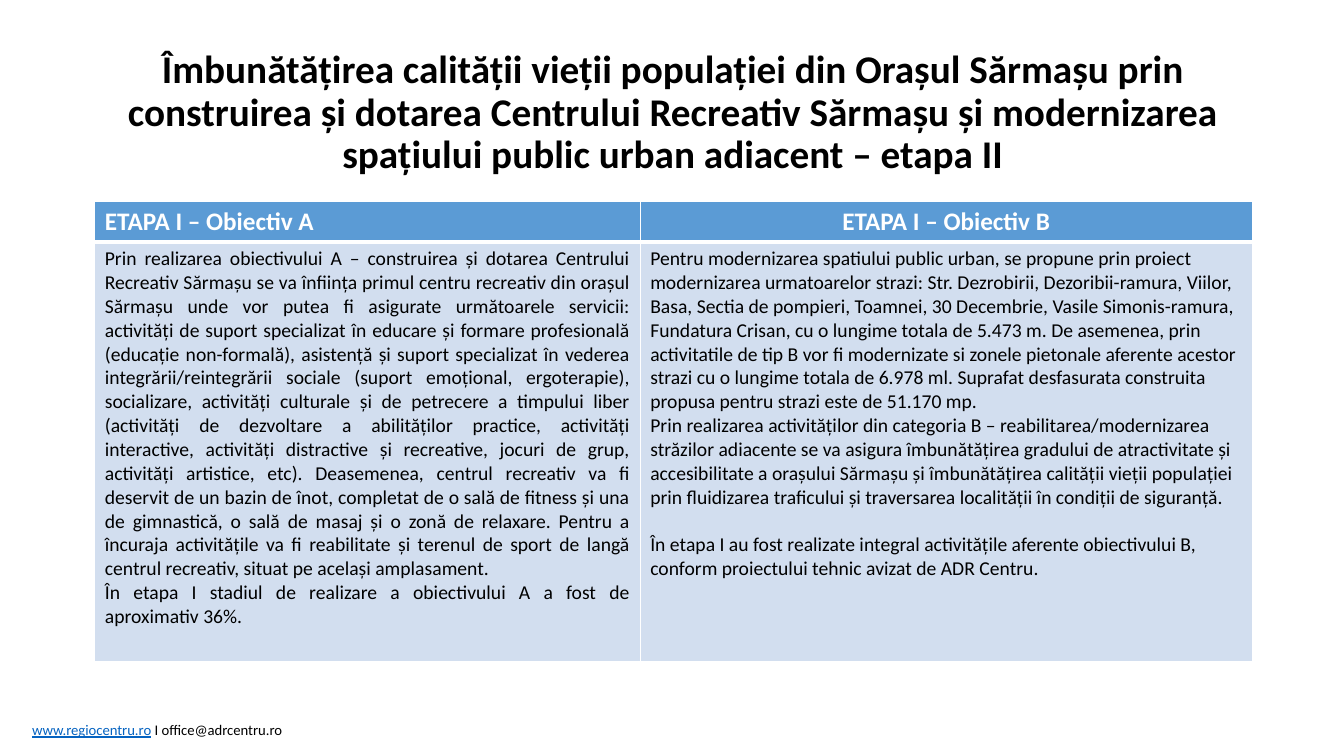
from lxml import etree
from pptx import Presentation
from pptx import util as u
from pptx.dml.color import RGBColor
from pptx.enum import text
from pptx.oxml.ns import qn

COLORS = {"black": "000000", "white": "FFFFFF", "link": "0563C1",
          "header": "5B9BD5", "body": "D2DEEF"}
ALIGN = text.PP_ALIGN

TITLE = ("Îmbunătățirea calității vieții populației din Orașul Sărmașu prin construirea și dotarea "
         "Centrului Recreativ Sărmașu și modernizarea spațiului public urban adiacent – etapa II")
HEADERS = [("ETAPA I – Obiectiv A", ALIGN.LEFT), ("ETAPA I – Obiectiv B", ALIGN.CENTER)]

# Each paragraph is a list of runs
OBJECTIVE_A = [
    ["Prin realizarea obiectivului A – construirea și dotarea Centrului Recreativ Sărmașu se va "
     "înființa primul centru recreativ din orașul Sărmașu unde vor putea fi asigurate următoarele "
     "servicii: activități de suport specializat în educare și formare profesională (educație "
     "non-formală), asistență și suport specializat în vederea integrării/reintegrării sociale "
     "(suport emoțional, ergoterapie), socializare, activități culturale și de petrecere a timpului "
     "liber (activități de dezvoltare a abilităților practice, activități interactive, activități "
     "distractive și recreative, jocuri de grup, activități artistice, etc). ",
     "Deasemenea, centrul recreativ va fi deservit de un bazin de înot, completat de o sală de "
     "fitness și una de gimnastică, o sală de masaj și o zonă de relaxare. Pentru a încuraja "
     "activitățile va fi reabilitate și terenul de sport de langă centrul recreativ, situat pe "
     "același amplasament."],
    ["În etapa I stadiul de realizare a obiectivului A a fost de aproximativ 36%."],
]
OBJECTIVE_B = [
    ["Pentru modernizarea spatiului public urban, se propune prin proiect modernizarea urmatoarelor "
     "strazi: Str. Dezrobirii, Dezoribii-ramura, Viilor, Basa, Sectia de pompieri, Toamnei, 30 "
     "Decembrie, Vasile Simonis-ramura, Fundatura Crisan, cu o lungime totala de 5.473 m. De "
     "asemenea, prin activitatile de tip B vor fi modernizate si zonele pietonale aferente acestor "
     "strazi cu o lungime totala de 6.978 ml. Suprafat desfasurata construita propusa pentru strazi "
     "este de 51.170 mp."],
    ["Prin realizarea activităților din categoria B – reabilitarea/modernizarea străzilor adiacente "
     "se va asigura îmbunătățirea gradului de atractivitate și accesibilitate a orașului Sărmașu și "
     "îmbunătățirea calității vieții populației prin fluidizarea traficului și traversarea "
     "localității în condiții de siguranță."],
    ["În etapa I au fost realizate integral activitățile aferente obiectivului B, conform "
     "proiectului tehnic avizat de ADR Centru."],
]


class SlideBuilder:
    """Holds the style and the current slide."""
    font = "Calibri"

    def __init__(self, slide):
        self.slide = slide

    def add_run(self, paragraph, wording, size, color="black", bold=False, underline=False):
        run = paragraph.add_run()
        run.text = wording
        font = run.font
        font.name, font.size = self.font, u.Pt(size)
        font.bold, font.underline = bold, underline
        font.color.rgb = RGBColor.from_string(COLORS[color])

    def title(self, wording, left, top, width, height):
        shape = self.slide.shapes.title
        shape.left, shape.top = u.Inches(left), u.Inches(top)
        shape.width, shape.height = u.Inches(width), u.Inches(height)
        frame = shape.text_frame
        frame.auto_size = text.MSO_AUTO_SIZE.NONE
        frame.vertical_anchor = text.MSO_ANCHOR.MIDDLE
        paragraph = frame.paragraphs[0]
        paragraph.alignment = ALIGN.CENTER
        paragraph.line_spacing = 0.9
        self.add_run(paragraph, wording, 28, bold=True)

    def text_box(self, runs, left, top, width, height, size):
        box = self.slide.shapes.add_textbox(*map(u.Inches, (left, top, width, height)))
        box.text_frame.word_wrap = True
        for wording, style in runs:
            self.add_run(box.text_frame.paragraphs[0], wording, size, **style)

    def table(self, left, top, widths, heights):
        frame = self.slide.shapes.add_table(
            len(heights), len(widths), *map(u.Inches, (left, top, sum(widths), sum(heights))))
        for column, width in zip(frame.table.columns, widths):
            column.width = u.Inches(width)
        for row, height in zip(frame.table.rows, heights):
            row.height = u.Inches(height)
        return frame.table

    def cell(self, cell, paragraphs, alignment, size, color, fill, bold=False,
             top_line=1, bottom_line=1, gap_before_last=0):
        frame = cell.text_frame
        for index, runs in enumerate(paragraphs):
            paragraph = frame.add_paragraph() if index else frame.paragraphs[0]
            paragraph.alignment = alignment
            for wording in runs:
                self.add_run(paragraph, wording, size, color, bold)
        if gap_before_last:
            paragraph.space_before = u.Pt(gap_before_last)
        # Borders come before the fill in the cell properties
        properties = cell._tc.get_or_add_tcPr()
        for side, points in (("L", 1), ("R", 1), ("T", top_line), ("B", bottom_line)):
            line = etree.SubElement(properties, qn(f"a:ln{side}"), w=str(u.Pt(points)))
            solid = etree.SubElement(line, qn("a:solidFill"))
            etree.SubElement(solid, qn("a:srgbClr"), val=COLORS["white"])
        cell.fill.solid()
        cell.fill.fore_color.rgb = RGBColor.from_string(COLORS[fill])


def main():
    presentation = Presentation()
    presentation.slide_width = u.Inches(13.33)
    presentation.slide_height = u.Inches(7.5)
    builder = SlideBuilder(presentation.slides.add_slide(presentation.slide_layouts[5]))

    # Footer
    builder.text_box([("www.regiocentru.ro", {"color": "link", "underline": True}),
                      (" I office@adrcentru.ro", {})], 0.22, 7.1, 2.78, 0.28, 10.5)

    # Objectives table
    table = builder.table(0.94, 2, widths=(5.41, 6.07), heights=(0.38, 4.16))
    for column, (wording, alignment) in enumerate(HEADERS):
        builder.cell(table.cell(0, column), [[wording]], alignment, 18, "white", "header",
                     bold=True, bottom_line=3)
    bodies = [(OBJECTIVE_A, ALIGN.JUSTIFY, 0), (OBJECTIVE_B, ALIGN.LEFT, 17)]
    for column, (paragraphs, alignment, gap) in enumerate(bodies):
        builder.cell(table.cell(1, column), paragraphs, alignment, 14, "black", "body",
                     top_line=3, gap_before_last=gap)

    # Title
    builder.title(TITLE, 0.92, 0.4, 11.5, 1.45)

    presentation.save("out.pptx")


if __name__ == "__main__":
    main()
